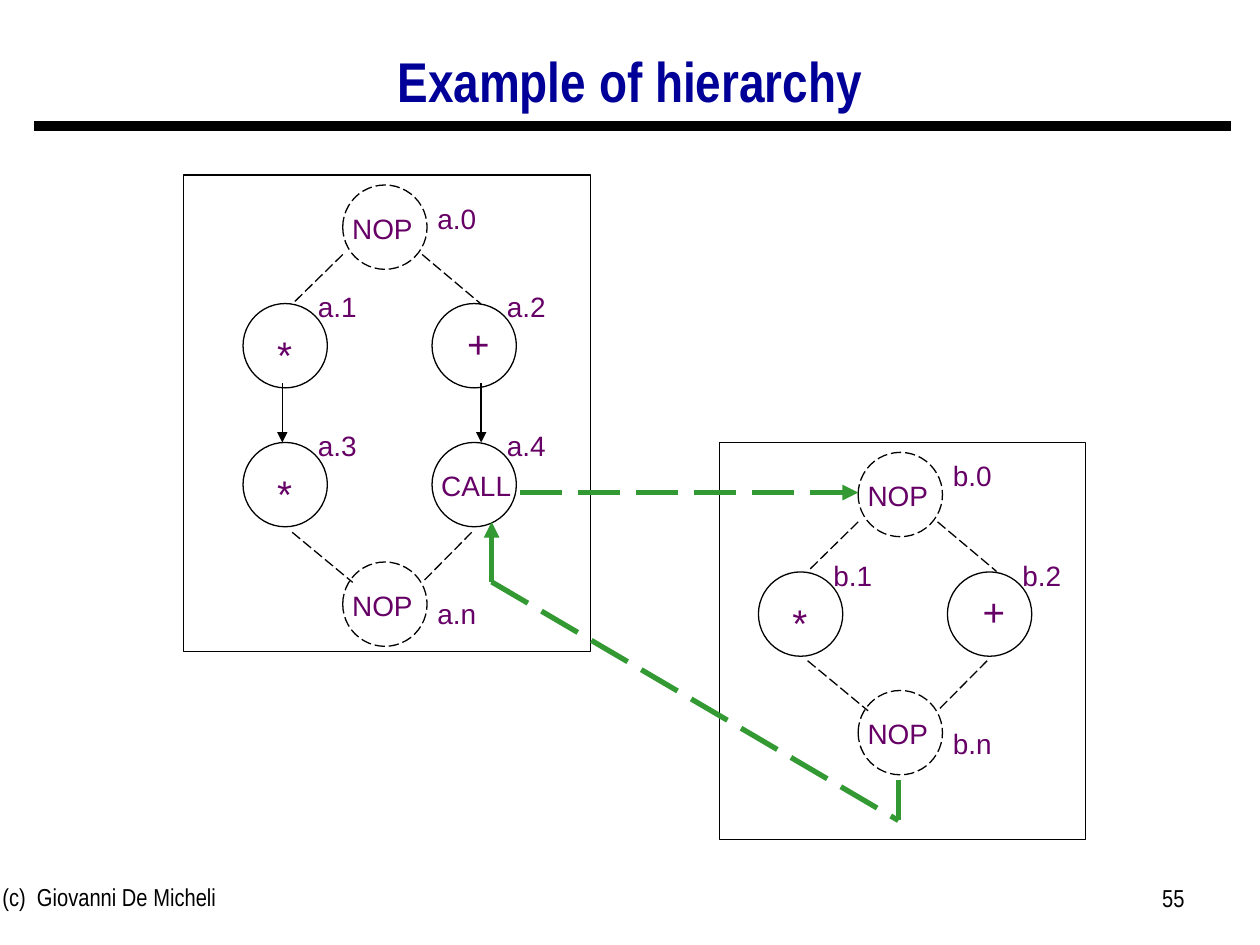
from pptx import Presentation
from pptx.dml.color import RGBColor
from pptx.enum.dml import MSO_LINE_DASH_STYLE as Dash
from pptx.enum.shapes import MSO_CONNECTOR as Conn, MSO_SHAPE as Shape
from pptx.enum.text import MSO_ANCHOR as Anchor, PP_ALIGN as Align
from pptx.oxml.ns import qn
from pptx.util import Cm, Pt
from lxml.etree import SubElement

rgb = RGBColor.from_string
BLACK, PURPLE, GREEN, NAVY = "000000", "660066", "339933", "000099"
DIAMETER = 1.7


def add_text(shapes, text, x, y, w, h, size=16, font="Arial", color=PURPLE, align=Align.CENTER):
    tf = shapes.add_textbox(Cm(x), Cm(y), Cm(w), Cm(h)).text_frame
    tf.word_wrap = True
    p = tf.paragraphs[0]
    p.alignment = align
    r = p.add_run()
    r.text = text
    r.font.size, r.font.name = Pt(size), font
    r.font.color.rgb = rgb(color)


def add_line(x1, y1, x2, y2, color=BLACK, width=0.75, dashed=False, arrow=False):
    c = s.shapes.add_connector(Conn.STRAIGHT, Cm(x1), Cm(y1), Cm(x2), Cm(y2))
    c.line.color.rgb = rgb(color)
    c.line.width = Pt(width)
    if dashed:
        c.line.dash_style = Dash.LONG_DASH
    if arrow:
        SubElement(c.line._get_or_add_ln(), qn("a:tailEnd"), type="triangle")
    SubElement(c._element.spPr, qn("a:effectLst"))


prs = Presentation()
prs.slide_width, prs.slide_height = Cm(25.4), Cm(19.05)
s = prs.slides.add_slide(prs.slide_layouts[5])

add_line(0.69, 2.54, 24.82, 2.54, width=6)
add_text(s.shapes, "(c)  Giovanni De Micheli", -0.2, 17.65, 8.05, 1.32,
         14, "Arial Narrow", BLACK, Align.LEFT)
add_text(s.shapes, "55", 18.21, 17.68, 5.92, 1.32, 14, "Arial Narrow", BLACK, Align.RIGHT)

title = s.shapes.title
title.left, title.top, title.width, title.height = Cm(1.9), Cm(0.33), Cm(21.6), Cm(2.74)
tf = title.text_frame
tf.vertical_anchor = Anchor.MIDDLE
p = tf.paragraphs[0]
p.alignment, p.line_spacing = Align.CENTER, 0.9
r = p.add_run()
r.text = "Example of hierarchy"
r.font.size, r.font.name, r.font.bold = Pt(32), "Arial Narrow", True
r.font.color.rgb = rgb(NAVY)

for x, y, w, h in [(3.7, 3.53, 8.2, 9.6), (14.5, 8.92, 7.39, 8)]:
    sp = s.shapes.add_shape(Shape.RECTANGLE, Cm(x), Cm(y), Cm(w), Cm(h))
    sp.shadow.inherit = False
    sp.fill.background()
    sp.line.color.rgb, sp.line.width = rgb(BLACK), Pt(0.75)

symbols = {
    "NOP": (-0.2, 0.4, 2, 0.94, 16),
    "CALL": (-0.2, 0.4, 2.18, 0.94, 16),
    "*": (0.2, 0.43, 1.27, 1.2, 22),
    "+": (0.2, 0.2, 1.47, 1.2, 22),
}
left, right = -2.01, 1.8
graphs = [
    (6.91, 3.73, 7.6, [
        ("a.0", "NOP", 0, 0, 1.6, 0.2),
        ("a.1", "*", left, 2.39, 1.2, -0.4),
        ("a.2", "+", right, 2.39, 1.2, -0.4),
        ("a.3", "*", left, 5.19, 1.2, -0.4),
        ("a.4", "CALL", right, 5.19, 1.2, -0.4),
        ("a.n", "NOP", 0, 7.6, 1.6, 0.58)]),
    (17.3, 9.12, 4.8, [
        ("b.0", "NOP", 0, 0, 1.6, 0),
        ("b.1", "*", left, 2.41, 1.2, -0.4),
        ("b.2", "+", right, 2.41, 1.2, -0.4),
        ("b.n", "NOP", 0, 4.8, 1.6, 0.6)]),
]

for gx, gy, depth, nodes in graphs:
    for label, symbol, dx, dy, label_dx, label_dy in nodes:
        x, y = gx + dx, gy + dy
        node = s.shapes.add_group_shape()
        sp = node.shapes.add_shape(Shape.OVAL, Cm(x), Cm(y), Cm(DIAMETER), Cm(DIAMETER))
        sp.shadow.inherit = False
        sp.fill.background()
        sp.line.color.rgb, sp.line.width = rgb(BLACK), Pt(0.75)
        if symbol == "NOP":
            sp.line.dash_style = Dash.LONG_DASH
        sx, sy, w, h, size = symbols[symbol]
        add_text(node.shapes, symbol, x + sx, y + sy, w, h, size)
        add_text(s.shapes, label, x + label_dx, y + label_dy, 1.4, 0.94)
    end = gy + depth
    for x1, y1, x2, y2 in [
        (0, gy + 1.4, -1.02, gy + 2.4),
        (1.6, gy + 1.4, 2.79, gy + 2.4),
        (-1.02, end - 0.6, 0.2, end + 0.41),
        (2.6, end - 0.6, 1.6, end + 0.41),
    ]:
        add_line(gx + x1, y1, gx + x2, y2, dashed=True)

for x in (5.69, 9.7):
    add_line(x, 7.72, x, 8.92, arrow=True)

add_line(10.49, 9.93, 17.3, 9.93, GREEN, 3, dashed=True, arrow=True)
add_line(18.11, 15.72, 18.11, 16.54, GREEN, 3, dashed=True)
add_line(9.91, 11.73, 18.11, 16.54, GREEN, 3, dashed=True)
add_line(9.91, 11.73, 9.91, 10.52, GREEN, 3, arrow=True)

prs.save("out.pptx")
